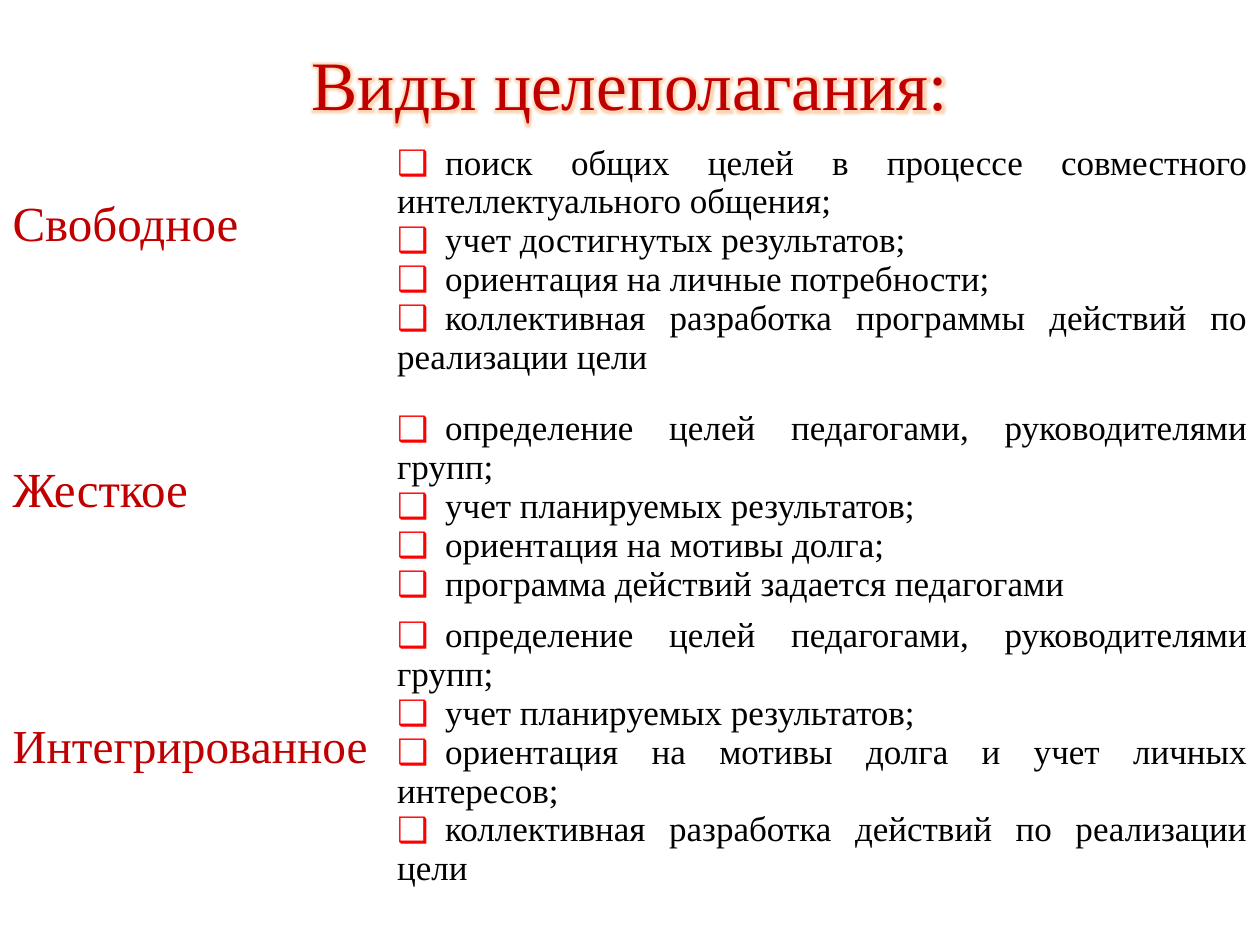
import pptx
import pptx.dml.color
import pptx.enum.text
import pptx.oxml
import pptx.oxml.ns
import pptx.util
from pptx.dml.color import RGBColor
from pptx.util import Cm

DARK_RED = RGBColor(0xC0, 0x00, 0x00)
BLACK = RGBColor(0x00, 0x00, 0x00)
BULLET_RED = RGBColor(0xFF, 0x00, 0x00)
GLOW_ORANGE = RGBColor(0xF7, 0x96, 0x46)

TITLE = "Виды целеполагания:"
# label, label size in points, top margin of the label, row height, features
GOAL_TYPES = [
    ("Свободное", 28, Cm(1.22), Cm(5.36), [
        "поиск общих целей в процессе совместного интеллектуального общения;",
        "учет достигнутых результатов;",
        "ориентация на личные потребности;",
        "коллективная разработка программы действий по реализации цели",
    ]),
    ("Жесткое", 28, Cm(1.22), Cm(3.96), [
        "определение целей педагогами, руководителями групп;",
        "учет планируемых результатов;",
        "ориентация на мотивы долга;",
        "программа действий задается педагогами",
    ]),
    ("Интегрированное", 27, Cm(2.24), Cm(5.18), [
        "определение целей педагогами, руководителями групп;",
        "учет планируемых результатов;",
        "ориентация на мотивы долга и учет личных интересов;",
        "коллективная разработка действий по реализации цели",
    ]),
]


class SlideBuilder:
    font_name = "Times New Roman"
    feature_size = 20
    bullet_gap = Cm(0.97)

    def __init__(self, slide):
        self.slide = slide

    def style(self, paragraph, size, color):
        for run in paragraph.runs:
            run.font.name = self.font_name
            run.font.size = pptx.util.Pt(size)
            run.font.color.rgb = color

    def add_glow(self, run):
        effects = pptx.oxml.parse_xml(
            f'<a:effectLst {pptx.oxml.ns.nsdecls("a")}><a:glow rad="63500">'
            f'<a:srgbClr val="{GLOW_ORANGE}"><a:alpha val="40000"/></a:srgbClr>'
            '</a:glow></a:effectLst>')
        fill = run.font._element.find(pptx.oxml.ns.qn("a:solidFill"))
        fill.addnext(effects)

    def add_title(self, text):
        title = self.slide.shapes.title
        title.left, title.top = Cm(1.27), Cm(0.76)
        title.width, title.height = Cm(22.86), Cm(1.83)
        frame = title.text_frame
        frame.text = text
        frame.vertical_anchor = pptx.enum.text.MSO_ANCHOR.MIDDLE
        paragraph = frame.paragraphs[0]
        paragraph.alignment = pptx.enum.text.PP_ALIGN.CENTER
        self.style(paragraph, 39.6, DARK_RED)
        self.add_glow(paragraph.runs[0])

    def add_bullet(self, paragraph):
        """Put a red box before the text, with a tab stop for the gap."""
        properties = paragraph._p.get_or_add_pPr()
        properties.set("marL", "0")
        properties.set("indent", "0")
        namespace = pptx.oxml.ns.nsdecls("a")
        for element in (
            f'<a:buClr {namespace}><a:srgbClr val="{BULLET_RED}"/></a:buClr>',
            f'<a:buFont {namespace} typeface="Arial"/>',
            f'<a:buChar {namespace} char="❑"/>',
            f'<a:tabLst {namespace}><a:tab pos="{self.bullet_gap}" algn="l"/></a:tabLst>',
        ):
            properties.append(pptx.oxml.parse_xml(element))

    def fill_label(self, cell, text, size, top_margin):
        cell.fill.background()
        cell.margin_top = top_margin
        cell.text_frame.text = text
        self.style(cell.text_frame.paragraphs[0], size, DARK_RED)

    def fill_features(self, cell, features):
        cell.fill.background()
        frame = cell.text_frame
        frame.text = "\n".join("\t" + feature for feature in features)
        for paragraph in frame.paragraphs:
            paragraph.alignment = pptx.enum.text.PP_ALIGN.JUSTIFY
            self.add_bullet(paragraph)
            self.style(paragraph, self.feature_size, BLACK)

    def add_goal_table(self, goal_types):
        height = sum(goal_type[3] for goal_type in goal_types)
        table = self.slide.shapes.add_table(
            len(goal_types), 2, Cm(0), Cm(2.77), Cm(25.4), height).table
        table.first_row = table.horz_banding = False
        table.columns[0].width = Cm(7.75)
        table.columns[1].width = Cm(17.65)
        for index, (label, size, top_margin, row_height, features) in enumerate(goal_types):
            table.rows[index].height = row_height
            self.fill_label(table.cell(index, 0), label, size, top_margin)
            self.fill_features(table.cell(index, 1), features)


def main():
    presentation = pptx.Presentation()
    presentation.slide_width = Cm(25.4)
    presentation.slide_height = Cm(19.05)
    title_only = presentation.slide_layouts[5]
    builder = SlideBuilder(presentation.slides.add_slide(title_only))
    builder.add_title(TITLE)
    builder.add_goal_table(GOAL_TYPES)
    presentation.save("out.pptx")


if __name__ == "__main__":
    main()
